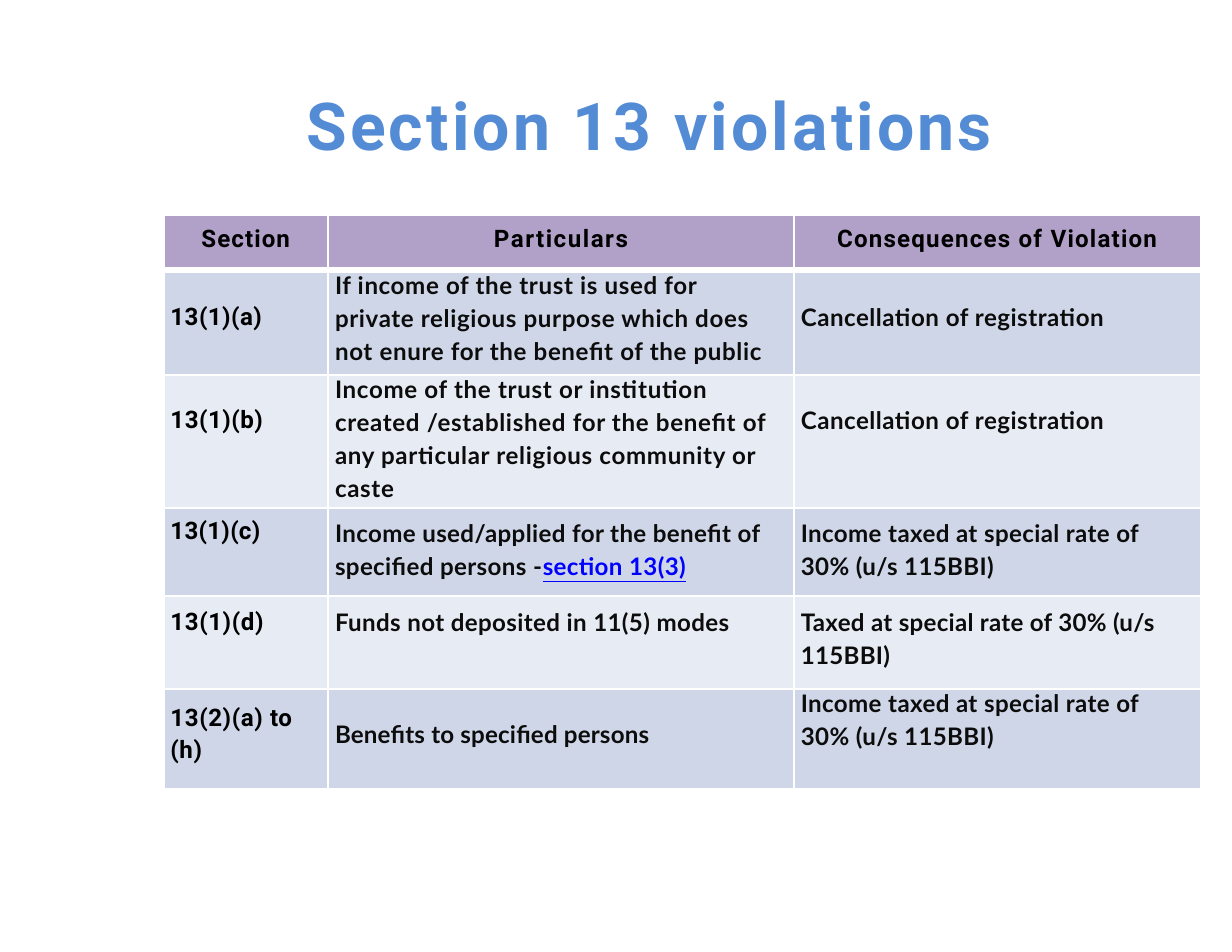
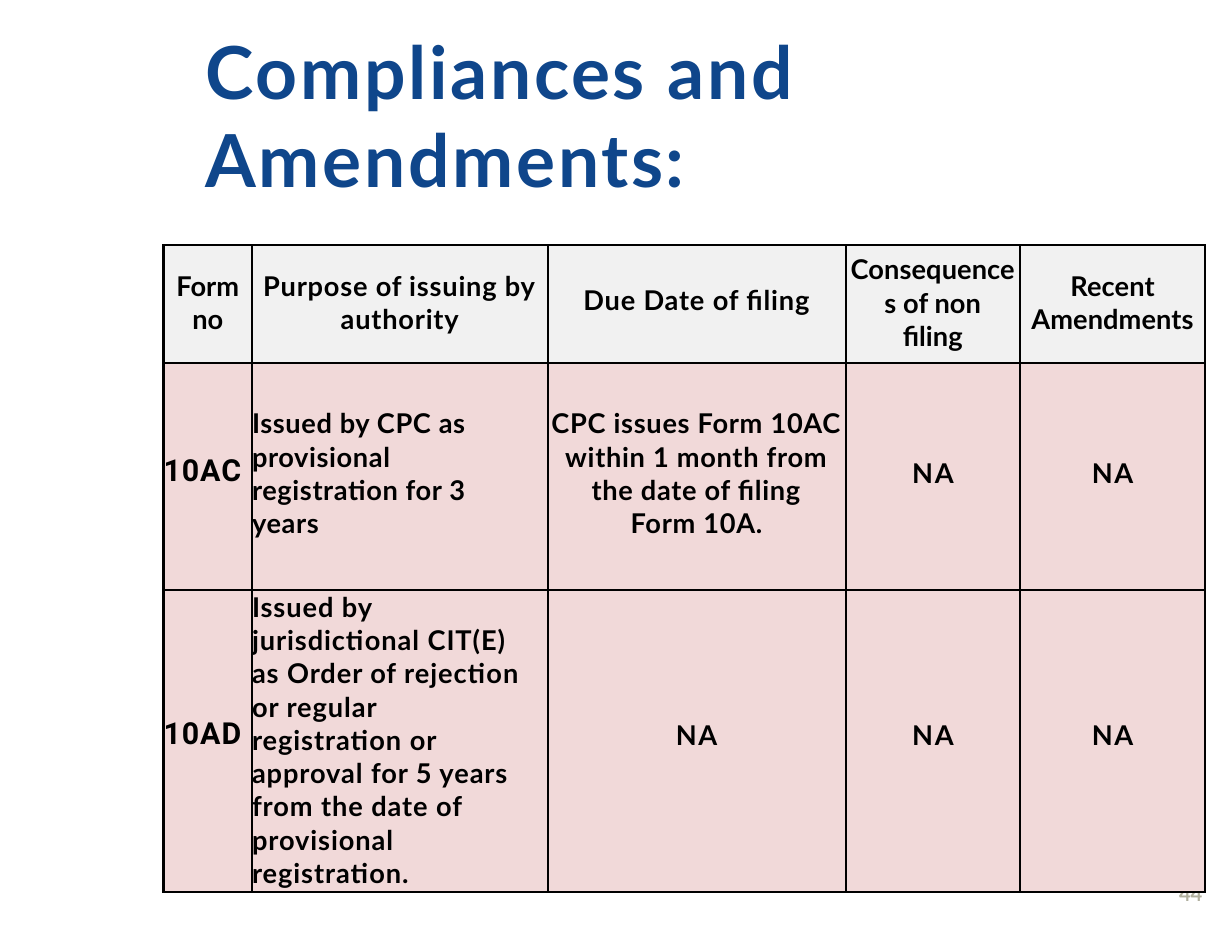
import copy

import pptx
import pptx.dml.color
import pptx.enum.text
import pptx.oxml
import pptx.oxml.ns
import pptx.util

Pt = pptx.util.Pt
Align = pptx.enum.text.PP_ALIGN
LEFT, CENTER = Align.LEFT, Align.CENTER

COLORS = {
    "black": "000000",
    "ink": "0C0C0C",
    "white": "FFFFFF",
    "link": "0000FF",
    "title_blue": "538BD5",
    "title_navy": "0F468B",
    "purple": "B1A0C7",
    "blue_band": "CFD6E7",
    "pale_band": "E7ECF4",
    "grey": "F1F1F1",
    "pink": "F1D9D9",
    "page_number": "B0AF9E",
}
LINKED = "section 13(3)"
TABLE_LEFT = 105.1

# Each cell holds its text, its top margin and its letter spacing.
VIOLATIONS = {
    "title": {"text": "Section 13 violations", "box": (197, 54.5, 535, 53),
              "font": "Roboto", "size": 42.5, "color": "title_blue", "spacing": 2.05},
    "top": 138.2,
    "columns": [105.8, 299.5, 261.4],
    "rows": [35.3, 67.7, 85.7, 56.2, 59.8, 64.1],
    "size": 15.5,
    "label_size": 15.5,
    "header_font": "Roboto",
    "text_color": "ink",
    "line_spacing": 1.15,
    "indent": 4.5,
    "alignments": [LEFT, LEFT, LEFT],
    "header_fill": "purple",
    "bands": ["blue_band", "pale_band"],
    "border": "white",
    "header_rule": 4.25,
    "cells": [
        [("Section", 6.5, 0.7), ("Particulars", 6.5, 1), ("Consequences of Violation", 6.5, 0.8)],
        [("13(1)(a)", 21.7, 0.3),
         ("If income of the trust is used for\n"
          "private religious purpose which does\vnot enure for the beneﬁt of the public", 0.65, 0.43),
         ("Cancellation of registration", 21.2, 0.35)],
        [("13(1)(b)", 19.9, 0.35),
         ("Income of the trust or institution\ncreated /established for the beneﬁt of\v"
          "any particular religious community or\vcaste", 0, 0.45),
         ("Cancellation of registration", 19.4, 0.35)],
        [("13(1)(c)", 5.8, 0.2),
         ("Income used/applied for the beneﬁt of\vspeciﬁed persons -section 13(3)", 3.6, 0.25),
         ("Income taxed at special rate of\v30% (u/s 115BBI)", 3.6, 0.25)],
        [("13(1)(d)", 8.1, 0.4),
         ("Funds not deposited in 11(5) modes", 7.7, 0.25),
         ("Taxed at special rate of 30% (u/s\v115BBI)", 5, 0.2)],
        [("13(2)(a) to\v(h)", 7.2, 0.4),
         ("Beneﬁts to speciﬁed persons", 20, 0.15),
         ("Income taxed at special rate of\n30% (u/s 115BBI)", 0, 0.25)],
    ],
}

COMPLIANCES = {
    "title": {"text": "Compliances and\vAmendments:", "box": (132.2, 17, 622, 114),
              "font": "Lato", "size": 47, "color": "title_navy", "spacing": 1.7},
    "page_number": "44",
    "top": 157.7,
    "columns": [56.9, 190.1, 191.5, 112.3, 118.8],
    "rows": [75.6, 146.2, 193.7],
    "size": 17.5,
    "label_size": 19.5,
    "header_font": "Lato",
    "text_color": "black",
    "line_spacing": 1.02,
    "indent": 0,
    "alignments": [LEFT, LEFT, CENTER, CENTER, CENTER],
    "header_fill": "grey",
    "bands": ["pink"],
    "border": "black",
    "header_rule": 1.5,
    "cells": [
        [("Form\vno", 15.2, 0),
         ("Purpose of issuing by\vauthority", 15.2, 0.5),
         ("Due Date of ﬁling", 24.8, 0.55),
         ("Consequence\vs of non\vﬁling", 4.5, 0.05),
         ("Recent\vAmendments", 15.2, 0.05)],
        [("10AC", 58.3, 0.6),
         ("Issued by CPC as\vprovisional\vregistration for 3\vyears", 28, 0.4),
         ("CPC issues Form 10AC\vwithin 1 month from\vthe date of ﬁling\vForm 10A.", 28, 0.45),
         ("NA", 60.1, 1.1), ("NA", 60.1, 1.1)],
        [("10AD", 81.3, 0.6),
         ("Issued by\njurisdictional CIT(E)\vas Order of rejection\vor regular\vregistration or\v"
          "approval for 5 years\vfrom the date of\vprovisional\vregistration.", 0, 0.6),
         ("NA", 82.7, 1.1), ("NA", 82.7, 1.1), ("NA", 82.7, 1.1)],
    ],
}


def rgb(name):
    return pptx.dml.color.RGBColor.from_string(COLORS[name])


def write(text_frame, text, font, size, color, spacing, alignment=LEFT, line_spacing=1):
    lines = text.split("\n")
    for index, line in enumerate(lines):
        paragraph = text_frame.paragraphs[0] if index == 0 else text_frame.add_paragraph()
        plain, linked, _ = line.partition(LINKED)
        paragraph.text = plain
        if linked:
            paragraph.add_run().text = linked
        paragraph.alignment = alignment
        paragraph.space_before = Pt(0)
        paragraph.line_spacing = line_spacing if index or "\v" in line else 1.0
        for run in paragraph.runs:
            is_link = run.text == LINKED
            run.font.name = font
            run.font.size = Pt(size)
            run.font.bold = True
            run.font.underline = is_link
            run.font.color.rgb = rgb("link" if is_link else color)
            run._r.get_or_add_rPr().set("spc", str(round(spacing * 100)))
        for line_break in paragraph._p.findall(pptx.oxml.ns.qn("a:br")):
            line_break.insert(0, copy.deepcopy(paragraph.runs[0]._r.rPr))


def prepare_frame(text_frame):
    text_frame.margin_left = text_frame.margin_right = 0
    text_frame.margin_top = text_frame.margin_bottom = 0
    text_frame.word_wrap = True
    text_frame.auto_size = pptx.enum.text.MSO_AUTO_SIZE.NONE
    text_frame.vertical_anchor = pptx.enum.text.MSO_ANCHOR.TOP


def add_title(slide, title):
    shape = slide.shapes.title
    shape.left, shape.top, shape.width, shape.height = map(Pt, title["box"])
    prepare_frame(shape.text_frame)
    write(shape.text_frame, title["text"], title["font"], title["size"],
          title["color"], title["spacing"])


def add_page_number(slide, number):
    shape = slide.shapes.add_textbox(Pt(758), Pt(566.6), Pt(18), Pt(17))
    prepare_frame(shape.text_frame)
    write(shape.text_frame, number, "Lato", 13, "page_number", -0.1)


def set_borders(cell, color, widths):
    properties = cell._tc.get_or_add_tcPr()
    for side, width in zip("LRTB", widths):
        properties.append(pptx.oxml.parse_xml(
            f'<a:ln{side} {pptx.oxml.ns.nsdecls("a")} w="{Pt(width)}">'
            f'<a:solidFill><a:srgbClr val="{COLORS[color]}"/></a:solidFill></a:ln{side}>'))


def add_table(slide, content):
    columns, rows = content["columns"], content["rows"]
    frame = slide.shapes.add_table(len(rows), len(columns), Pt(TABLE_LEFT), Pt(content["top"]),
                                   Pt(sum(columns)), Pt(sum(rows)))
    table = frame.table
    table.horz_banding = False
    for column, width in zip(table.columns, columns):
        column.width = Pt(width)
    for row, height in zip(table.rows, rows):
        row.height = Pt(height)

    for row_index, row in enumerate(content["cells"]):
        is_header = row_index == 0
        top_rule = content["header_rule"] if row_index == 1 else 1.5
        bottom_rule = content["header_rule"] if is_header else 1.5
        bands = content["bands"]
        fill = content["header_fill"] if is_header else bands[(row_index - 1) % len(bands)]
        for column_index, (text, top, spacing) in enumerate(row):
            is_label = column_index == 0 and not is_header
            alignment = CENTER if is_header else content["alignments"][column_index]
            cell = table.cell(row_index, column_index)
            cell.margin_left = Pt(content["indent"] if alignment == LEFT else 0)
            cell.margin_right = cell.margin_bottom = 0
            cell.margin_top = Pt(top)
            cell.vertical_anchor = pptx.enum.text.MSO_ANCHOR.TOP
            set_borders(cell, content["border"], (1.5, 1.5, top_rule, bottom_rule))
            cell.fill.solid()
            cell.fill.fore_color.rgb = rgb(fill)
            font = "Roboto" if is_label else content["header_font"] if is_header else "Lato"
            size = content["label_size"] if is_label else content["size"]
            color = "black" if is_label or is_header else content["text_color"]
            write(cell.text_frame, text, font, size, color, spacing,
                  alignment, content["line_spacing"])


def main():
    presentation = pptx.Presentation()
    presentation.slide_width = Pt(792)
    presentation.slide_height = Pt(612)
    for content in (VIOLATIONS, COMPLIANCES):
        slide = presentation.slides.add_slide(presentation.slide_layouts[5])
        add_title(slide, content["title"])
        if "page_number" in content:
            add_page_number(slide, content["page_number"])
        add_table(slide, content)
    presentation.save("out.pptx")


if __name__ == "__main__":
    main()
